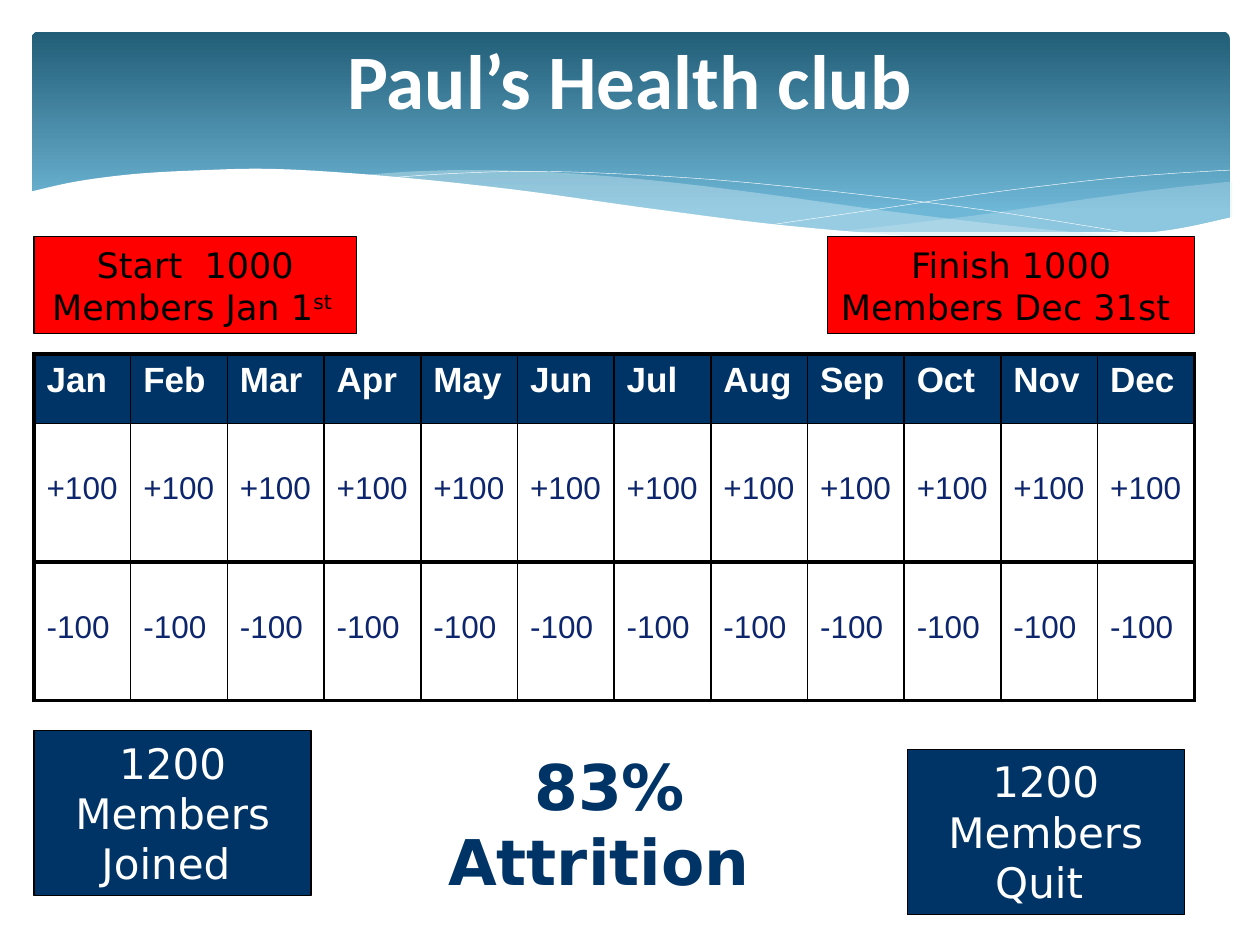
from dataclasses import dataclass

from lxml.etree import SubElement
from pptx import Presentation
from pptx.dml.color import RGBColor as RGB
from pptx.enum.shapes import MSO_SHAPE as SHAPE
from pptx.enum.text import MSO_ANCHOR as ANCHOR, MSO_AUTO_SIZE as AUTO, PP_ALIGN as ALIGN
from pptx.oxml.ns import qn
from pptx.util import Inches, Pt


@dataclass(frozen=True)
class Theme:
    white: str = "FFFFFF"
    black: str = "000000"
    red: str = "FF0000"
    navy: str = "003366"
    ink: str = "0C256D"
    mist: str = "D5EDF4"
    header_top: str = "215D77"
    header_bottom: str = "6FB7D7"
    title_font: str = "Calibri"
    table_font: str = "Arial"
    box_font: str = "DejaVu Sans"
    title: int = 44
    big: int = 36
    total: int = 24
    label: int = 20
    value: int = 18


def smooth(points, steps=6):
    pts = [points[0], *points, points[-1]]
    curve = [points[0]]
    for a, b, c, d in zip(pts, pts[1:], pts[2:], pts[3:]):
        for i in range(1, steps + 1):
            t = i / steps
            curve.append(tuple(
                (2 * q + (r - p) * t + (2 * p - 5 * q + 4 * r - s) * t ** 2
                 + (3 * q - p - 3 * r + s) * t ** 3) / 2
                for p, q, r, s in zip(a, b, c, d)))
    return curve


class SlideBuilder:
    def __init__(self, slide, theme):
        self.s = slide
        self.theme = theme

    def font(self, r, name, size, color, bold=False):
        r.font.name, r.font.size, r.font.bold = name, Pt(size), bold
        r.font.color.rgb = RGB.from_string(color)

    def header(self, x, y, w, h):
        sp = self.s.shapes.add_shape(SHAPE.ROUNDED_RECTANGLE, *map(Inches, (x, y, w, h)))
        sp.adjustments[0] = 0.034
        sp.shadow.inherit = False
        sp.line.fill.background()
        sp.fill.gradient()
        sp.fill.gradient_angle = 270
        colors = (self.theme.header_top, self.theme.header_bottom)
        for stop, color, pos in zip(sp.fill.gradient_stops, colors, (0, 0.9)):
            stop.color.rgb = RGB.from_string(color)
            stop.position = pos

    def wave(self, points, fill=None, alpha=100):
        pts = [(Inches(x), Inches(y)) for x, y in points]
        fb = self.s.shapes.build_freeform(*pts[0])
        fb.add_line_segments(pts[1:], close=fill is not None)
        sp = fb.convert_to_shape()
        sp.shadow.inherit = False
        if fill is None:
            sp.fill.background()
            sp.line.color.rgb = RGB.from_string(self.theme.white)
            sp.line.width = Pt(0.25)
            return
        sp.line.fill.background()
        sp.fill.solid()
        sp.fill.fore_color.rgb = RGB.from_string(fill)
        if alpha < 100:
            clr = sp.fill._xPr.find(qn("a:solidFill"))[0]
            SubElement(clr, qn("a:alpha"), val=str(alpha * 1000))

    def text(self, text, x, y, w, h, size, color, font, bold=False):
        sp = self.s.shapes.add_textbox(*map(Inches, (x, y, w, h)))
        tf = sp.text_frame
        tf.word_wrap = True
        tf.text = text
        p = tf.paragraphs[0]
        p.alignment = ALIGN.CENTER
        self.font(p.runs[0], font, size, color, bold)
        return sp

    def title(self, text, x, y, w, h):
        t = self.theme
        sp = self.text(text, x, y, w, h, t.title, t.white, t.title_font, True)
        sp.text_frame.vertical_anchor = ANCHOR.MIDDLE

    def box(self, text, x, y, w, h, size, color, fill, superscript=None):
        t = self.theme
        sp = self.text(text, x, y, w, h, size, color, t.box_font)
        sp.text_frame.auto_size = AUTO.SHAPE_TO_FIT_TEXT
        sp.fill.solid()
        sp.fill.fore_color.rgb = RGB.from_string(fill)
        sp.line.color.rgb = RGB.from_string(t.black)
        sp.line.width = Pt(0.75)
        if superscript:
            r = sp.text_frame.paragraphs[0].add_run()
            r.text = superscript
            self.font(r, t.box_font, size, color)
            r._r.get_or_add_rPr().set("baseline", "30000")

    def borders(self, cell, **widths):
        tcPr = cell._tc.get_or_add_tcPr()
        for side, width in widths.items():
            ln = SubElement(tcPr, qn(f"a:ln{side}"), w=str(Pt(width)))
            fill = SubElement(ln, qn("a:solidFill"))
            SubElement(fill, qn("a:srgbClr"), val=self.theme.black)

    def table(self, rows, x, y, w, heights):
        t = self.theme
        n = len(rows[0])
        frame = self.s.shapes.add_table(
            len(rows), n, *map(Inches, (x, y, w, sum(heights))))
        tbl = frame.table
        tbl.first_row = tbl.horz_banding = False
        for col in tbl.columns:
            col.width = Inches(w / n)
        col_lines = [2.25] + [1] * (n - 1) + [2.25]
        row_lines = [2.25, 1, 3, 2.25]
        for i, (row, height) in enumerate(zip(rows, heights)):
            tbl.rows[i].height = Inches(height)
            for j, text in enumerate(row):
                cell = tbl.cell(i, j)
                self.borders(cell, L=col_lines[j], R=col_lines[j + 1],
                             T=row_lines[i], B=row_lines[i + 1])
                cell.text_frame.text = text
                r = cell.text_frame.paragraphs[0].runs[0]
                if i == 0:
                    cell.fill.solid()
                    cell.fill.fore_color.rgb = RGB.from_string(t.navy)
                    self.font(r, t.table_font, t.label, t.white, True)
                else:
                    cell.fill.background()
                    cell.margin_top = Inches(0.38)
                    self.font(r, t.table_font, t.value, t.ink)


def main():
    prs = Presentation()
    prs.slide_width, prs.slide_height = Inches(10), Inches(7.5)
    t = Theme()
    b = SlideBuilder(prs.slides.add_slide(prs.slide_layouts[6]), t)

    b.header(0.25, 0.25, 9.51, 1.59)
    right_top = [(9.78, 1.44), (9.22, 1.5), (8.62, 1.58), (7.81, 1.7), (7.08, 1.79), (6.63, 1.84)]
    right_bottom = [(6.63, 1.84), (7.2, 1.88), (7.83, 1.91), (8.36, 1.91), (8.91, 1.88),
                    (9.37, 1.81), (9.78, 1.72)]
    b.wave(smooth(right_top) + smooth(right_bottom), t.mist, 29)
    middle_top = [(8.95, 1.88), (8.09, 1.8), (7.08, 1.68), (6, 1.53), (5.16, 1.43),
                  (4.43, 1.37), (3.82, 1.35), (3.3, 1.36), (2.88, 1.39)]
    middle_bottom = [(2.88, 1.39), (3.64, 1.46), (4.51, 1.57), (5.31, 1.69), (6.03, 1.78),
                     (6.82, 1.85), (7.5, 1.9), (8.2, 1.92), (8.95, 1.88)]
    b.wave(smooth(middle_top) + smooth(middle_bottom), t.mist, 40)
    b.wave(smooth([(3.11, 1.41), (3.54, 1.38), (4.18, 1.36), (4.91, 1.38), (5.83, 1.44),
                   (6.97, 1.56), (7.97, 1.69), (9.09, 1.87)]))
    b.wave(smooth([(6.15, 1.78), (6.97, 1.66), (7.78, 1.54), (8.68, 1.43), (9.26, 1.38),
                   (9.77, 1.35)]))
    edge = [(9.79, 1.72), (9.32, 1.82), (8.77, 1.88), (8.25, 1.9), (7.63, 1.9), (6.9, 1.85),
            (6.05, 1.77), (5.05, 1.64), (4.2, 1.52), (3.41, 1.43), (2.72, 1.37), (2.13, 1.34),
            (1.63, 1.35), (1.08, 1.38), (0.61, 1.44), (0.25, 1.52)]
    b.wave(smooth(edge) + [(0.25, 2.22), (9.79, 2.22)], t.white)

    b.title("Paul’s Health club", 0.75, 0, 8.5, 1.25)
    months = "Jan Feb Mar Apr May Jun Jul Aug Sep Oct Nov Dec".split()
    b.table([months, ["+100"] * 12, ["-100"] * 12], 0.27, 2.81, 9.21, [0.55, 1.1, 1.1])

    b.box("Start  1000 Members Jan 1", 0.27, 1.88, 2.56, 0.77, t.label, t.black, t.red, "st ")
    b.box("Finish 1000 Members Dec 31st ", 6.57, 1.88, 2.91, 0.77, t.label, t.black, t.red)
    b.box("1200 Members Joined ", 0.27, 5.8, 2.2, 1.31, t.total, t.white, t.navy)
    b.box("1200 Members Quit ", 7.2, 5.95, 2.2, 1.31, t.total, t.white, t.navy)
    b.text("83% Attrition ", 3.11, 5.88, 3.46, 1.31, t.big, t.navy, t.box_font, True)

    prs.save("out.pptx")


if __name__ == "__main__":
    main()
